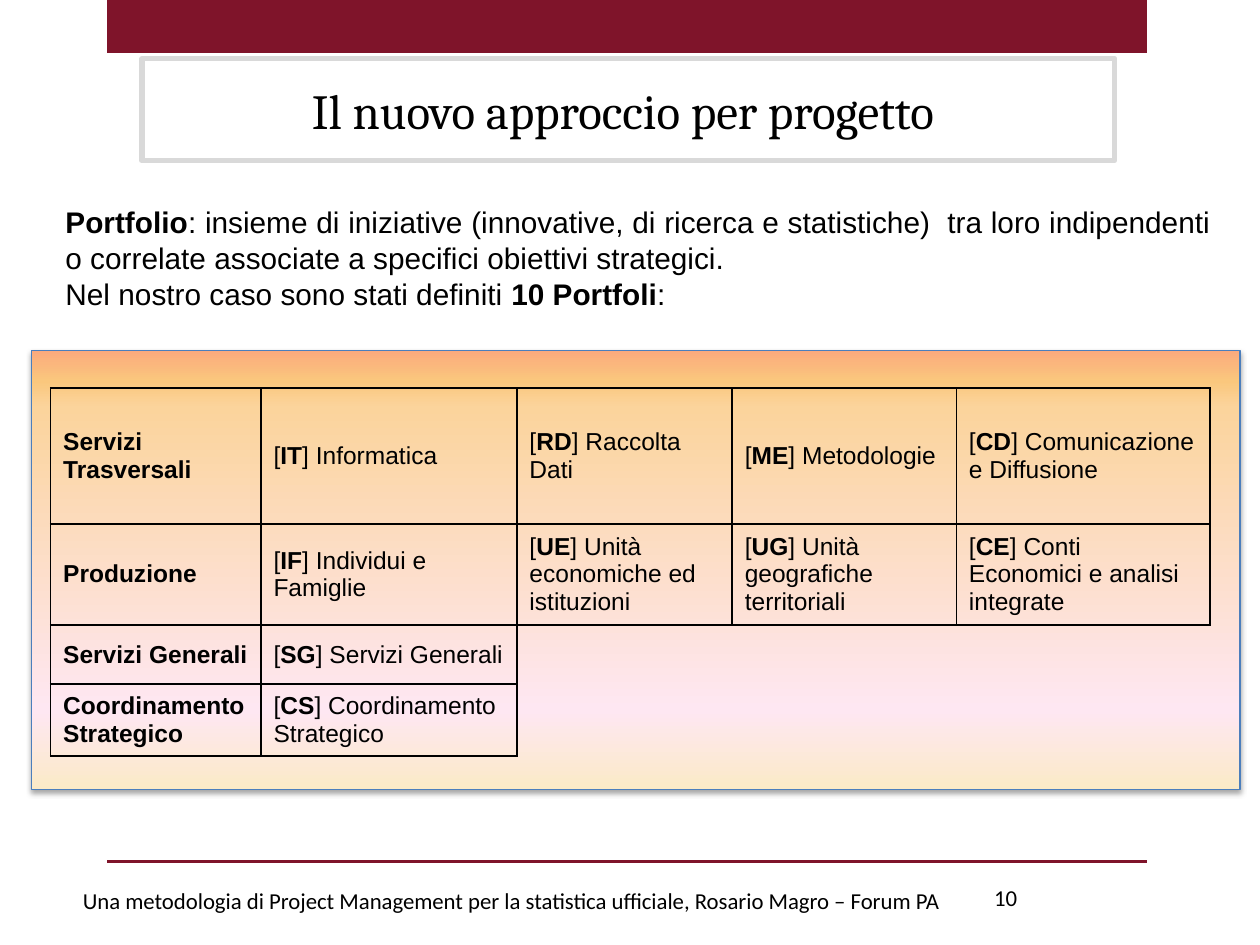
from lxml.etree import SubElement as Sub
from pptx import Presentation
from pptx.dml.color import RGBColor as Rgb
from pptx.enum.shapes import MSO_CONNECTOR as Link, MSO_SHAPE as Form
from pptx.enum.text import MSO_ANCHOR as Anchor, PP_ALIGN as Align
from pptx.oxml.ns import qn
from pptx.util import Cm, Pt

RED = "7F142A"
STOPS = [(0, "FBEAC7"), (18, "FEE7F2"), (87, "FBD49C"), (93, "FAC77D"), (100, "FBA97D")]
COLS = [4.24, 5.16, 4.34, 4.52, 5.11]
ROWS = [2.74, 2.04, 1.19, 1.45]
CELLS = [
    ["*Servizi Trasversali*", "[*IT*] Informatica", "[*RD*] Raccolta Dati",
     "[*ME*] Metodologie", "[*CD*] Comunicazione e Diffusione"],
    ["*Produzione*", "[*IF*] Individui e Famiglie", "[*UE*] Unità economiche ed istituzioni",
     "[*UG*] Unità geografiche territoriali", "[*CE*] Conti Economici e analisi integrate"],
    ["*Servizi Generali*", "[*SG*] Servizi Generali"],
    ["*Coordinamento Strategico*", "[*CS*] Coordinamento Strategico"],
]
INTRO = [
    "*Portfolio*: insieme di iniziative (innovative, di ricerca e statistiche)  tra loro "
    "indipendenti o correlate associate a specifici obiettivi strategici. ",
    "Nel nostro caso sono stati definiti *10 Portfoli*:",
]
FOOT = "Una metodologia di Project Management per la statistica ufficiale, Rosario Magro – Forum PA"


def paint(color, code):
    color.rgb = Rgb.from_string(code)


def write(frame, lines, size, font="Arial", align=None):
    for i, line in enumerate(lines):
        para = frame.add_paragraph() if i else frame.paragraphs[0]
        para.alignment = align
        for j, part in enumerate(line.split("*")):
            if part:
                run = para.add_run()
                run.text = part
                run.font.size = Pt(size)
                run.font.name = font
                run.font.bold = j % 2 == 1
                paint(run.font.color, "000000")


def add_text(slide, area, lines, size, font="Arial", align=None):
    frame = slide.shapes.add_textbox(*map(Cm, area)).text_frame
    frame.word_wrap = True
    write(frame, lines, size, font, align)


def add_title(slide, area, text):
    title = slide.shapes.title
    title.left, title.top, title.width, title.height = map(Cm, area)
    geom = Sub(title.element.spPr, qn("a:prstGeom"), prst="roundRect")
    Sub(geom, qn("a:avLst"))
    title.fill.solid()
    paint(title.fill.fore_color, "FFFFFF")
    paint(title.line.color, "D9D9D9")
    title.line.width = Pt(3)
    frame = title.text_frame
    frame.word_wrap = True
    frame.vertical_anchor = Anchor.MIDDLE
    write(frame, [text], 28, "Cambria", Align.CENTER)


def add_rect(slide, area):
    rect = slide.shapes.add_shape(Form.RECTANGLE, *map(Cm, area))
    rect.shadow.inherit = False
    return rect


def add_bar(slide, area):
    bar = add_rect(slide, area)
    bar.fill.solid()
    paint(bar.fill.fore_color, RED)
    bar.line.fill.background()


def add_rule(slide, left, right, top):
    rule = slide.shapes.add_connector(Link.STRAIGHT, Cm(left), Cm(top), Cm(right), Cm(top))
    paint(rule.line.color, RED)
    rule.line.width = Pt(2)
    Sub(rule.element.spPr, qn("a:effectLst"))


def add_panel(slide, area):
    panel = add_rect(slide, area)
    panel.fill.gradient()
    panel.fill.gradient_angle = 90
    stops = panel.element.spPr.find(".//" + qn("a:gsLst"))
    for old in list(stops):
        stops.remove(old)
    for place, code in STOPS:
        stop = Sub(stops, qn("a:gs"), pos=str(place * 1000))
        Sub(stop, qn("a:srgbClr"), val=code)
    paint(panel.line.color, "4B7EBC")
    panel.line.width = Pt(0.75)
    cast = Sub(panel.element.spPr.find(qn("a:effectLst")), qn("a:outerShdw"),
               blurRad=str(Pt(3.1)), dist=str(Pt(1.8)), dir="5400000", rotWithShape="0")
    tint = Sub(cast, qn("a:srgbClr"), val="000000")
    Sub(tint, qn("a:alpha"), val="35000")


def edge(cell, sides):
    props = cell._tc.get_or_add_tcPr()
    for side in sides:
        line = Sub(props, qn("a:ln" + side), w=str(Pt(1)))
        Sub(Sub(line, qn("a:solidFill")), qn("a:srgbClr"), val="000000")


def add_grid(slide, left, top):
    size = map(Cm, (left, top, sum(COLS), sum(ROWS)))
    table = slide.shapes.add_table(len(ROWS), len(COLS), *size).table
    table.first_row = table.horz_banding = False
    style = table._tbl.tblPr.find(qn("a:tableStyleId"))
    style.text = "{2D5ABB26-0587-4C30-8999-92F81FD0307C}"
    for col, width in zip(table.columns, COLS):
        col.width = Cm(width)
    for row, height in zip(table.rows, ROWS):
        row.height = Cm(height)
    for r, line in enumerate(CELLS):
        for c, text in enumerate(line):
            cell = table.cell(r, c)
            cell.vertical_anchor = Anchor.MIDDLE
            write(cell.text_frame, [text], 14)
            edge(cell, "LRTB")
            cell.fill.background()
    blank = table.cell(2, 2)
    blank.merge(table.cell(3, 4))
    edge(blank, "LT")
    blank.fill.background()


def main():
    deck = Presentation()
    deck.slide_width, deck.slide_height = Cm(25.4), Cm(19.05)
    slide = deck.slides.add_slide(deck.slide_layouts[5])
    add_bar(slide, (2.16, 0, 20.96, 1.07))
    add_rule(slide, 2.16, 23.12, 17.37)
    add_panel(slide, (0.64, 7.06, 24.36, 8.86))
    add_text(slide, (1.07, 3.99, 23.6, 2.44), INTRO, 17, align=Align.JUSTIFY)
    add_grid(slide, 1.02, 7.82)
    add_text(slide, (1.42, 17.75, 18.03, 1.02), [FOOT], 13, "Calibri")
    add_text(slide, (19.79, 17.7, 4.85, 1.02), ["10"], 13, "Calibri")
    add_title(slide, (2.86, 1.18, 19.61, 2.06), "Il nuovo approccio per progetto ")
    deck.save("out.pptx")


if __name__ == "__main__":
    main()
